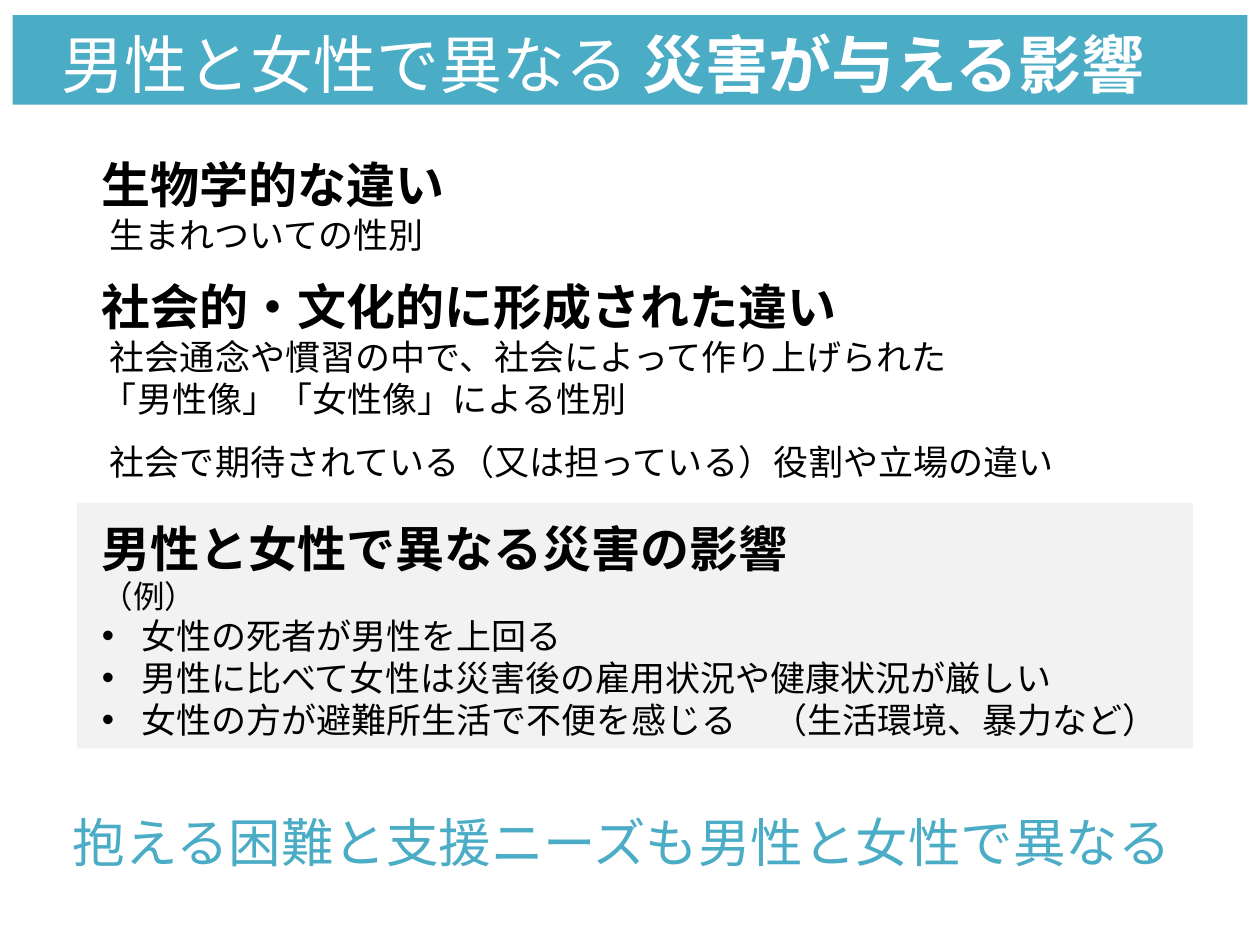
from lxml import etree
from pptx import Presentation
from pptx.dml.color import RGBColor
from pptx.enum import shapes, text
from pptx.oxml.ns import qn
from pptx.util import Inches, Pt

TEAL = RGBColor(0x4B, 0xAC, 0xC6)
GREY = RGBColor(0xF2, 0xF2, 0xF2)
WHITE = RGBColor(0xFF, 0xFF, 0xFF)
BLACK = RGBColor(0, 0, 0)
CJK = "Noto Sans CJK JP"
HEAD, BODY = 28, 20


def add_run(para, words, size, font, color, bold=False):
    """Add one run and fix the line pitch at 1.2 times its size."""
    run = para.add_run()
    run.text = words
    run.font.size = Pt(size)
    run.font.name = font
    run.font.bold = bold
    run.font.color.rgb = color
    asian = etree.SubElement(run.font._element, qn("a:ea"))
    asian.set("typeface", CJK)
    para.line_spacing = Pt(size * 1.2)
    return run


def set_frame(shape, left=0.1, anchor=text.MSO_ANCHOR.MIDDLE):
    frame = shape.text_frame
    frame.word_wrap = True
    frame.vertical_anchor = anchor
    frame.margin_left, frame.margin_right = Inches(left), Inches(0.1)
    frame.margin_top, frame.margin_bottom = Inches(0.08), Inches(0.02)
    return frame


def add_panel(slide, box, fill):
    panel = slide.shapes.add_shape(shapes.MSO_SHAPE.RECTANGLE, *map(Inches, box))
    panel.shadow.inherit = False
    panel.fill.solid()
    panel.fill.fore_color.rgb = fill
    panel.line.fill.background()
    return panel


def add_label(slide, box):
    return slide.shapes.add_textbox(*map(Inches, box))


def next_para(frame):
    """Return the empty first paragraph, or a new one."""
    first = frame.paragraphs[0]
    para = frame.add_paragraph() if first.runs else first
    para.alignment = text.PP_ALIGN.LEFT
    return para


def add_bullet(para):
    para.alignment = text.PP_ALIGN.JUSTIFY
    props = para._p.get_or_add_pPr()
    props.set("marL", str(Inches(0.31)))
    props.set("indent", str(-Inches(0.31)))
    font = etree.SubElement(props, qn("a:buFont"))
    font.set("typeface", "Arial")
    mark = etree.SubElement(props, qn("a:buChar"))
    mark.set("char", "•")


def add_title(slide, box):
    para = next_para(set_frame(add_panel(slide, box, TEAL), 0.39))
    add_run(para, "男性と女性で異なる ", 36, "Arial", WHITE)
    add_run(para, "災害が与える影響", 36, "Arial", WHITE, True)


def add_causes(slide, box):
    frame = set_frame(add_label(slide, box), 0.2)
    rows = [
        ("生物学的な違い", True),
        (" 生まれついての性別", False),
        ("社会的・文化的に形成された違い", True),
        (" 社会通念や慣習の中で、社会によって作り上げられた\v「男性像」「女性像」による性別", False),
        (" 社会で期待されている（又は担っている）役割や立場の違い", False),
    ]
    for words, head in rows:
        para = next_para(frame)
        for i, line in enumerate(words.split("\v")):
            if i:
                para.add_line_break()
            add_run(para, line, HEAD if head else BODY, CJK, BLACK, head)
        if not head and words != rows[-1][0]:
            para.space_after = Pt(12)


def add_effects(slide, box):
    frame = set_frame(add_panel(slide, box, GREY), 0.2)
    add_run(next_para(frame), "男性と女性で異なる災害の影響", HEAD, "Calibri", BLACK, True)
    add_run(next_para(frame), "（例）", 18, "Calibri", BLACK)
    for words in (
        "女性の死者が男性を上回る",
        "男性に比べて女性は災害後の雇用状況や健康状況が厳しい",
        "女性の方が避難所生活で不便を感じる　（生活環境、暴力など）",
    ):
        para = next_para(frame)
        add_run(para, words, BODY, "Calibri", BLACK)
        add_bullet(para)


def add_closing(slide, box):
    frame = set_frame(add_label(slide, box), anchor=text.MSO_ANCHOR.TOP)
    add_run(next_para(frame), "抱える困難と支援ニーズも男性と女性で異なる", 30, "Calibri", TEAL)


def main():
    deck = Presentation()
    deck.slide_width, deck.slide_height = Inches(10), Inches(7.5)
    slide = deck.slides.add_slide(deck.slide_layouts[6])
    add_title(slide, (0.1, 0.12, 9.8, 0.71))
    add_causes(slide, (0.61, 1.07, 8.86, 2.86))
    add_effects(slide, (0.61, 3.99, 8.86, 1.95))
    add_closing(slide, (0.48, 6.35, 9.03, 0.61))
    deck.save("out.pptx")


if __name__ == "__main__":
    main()
